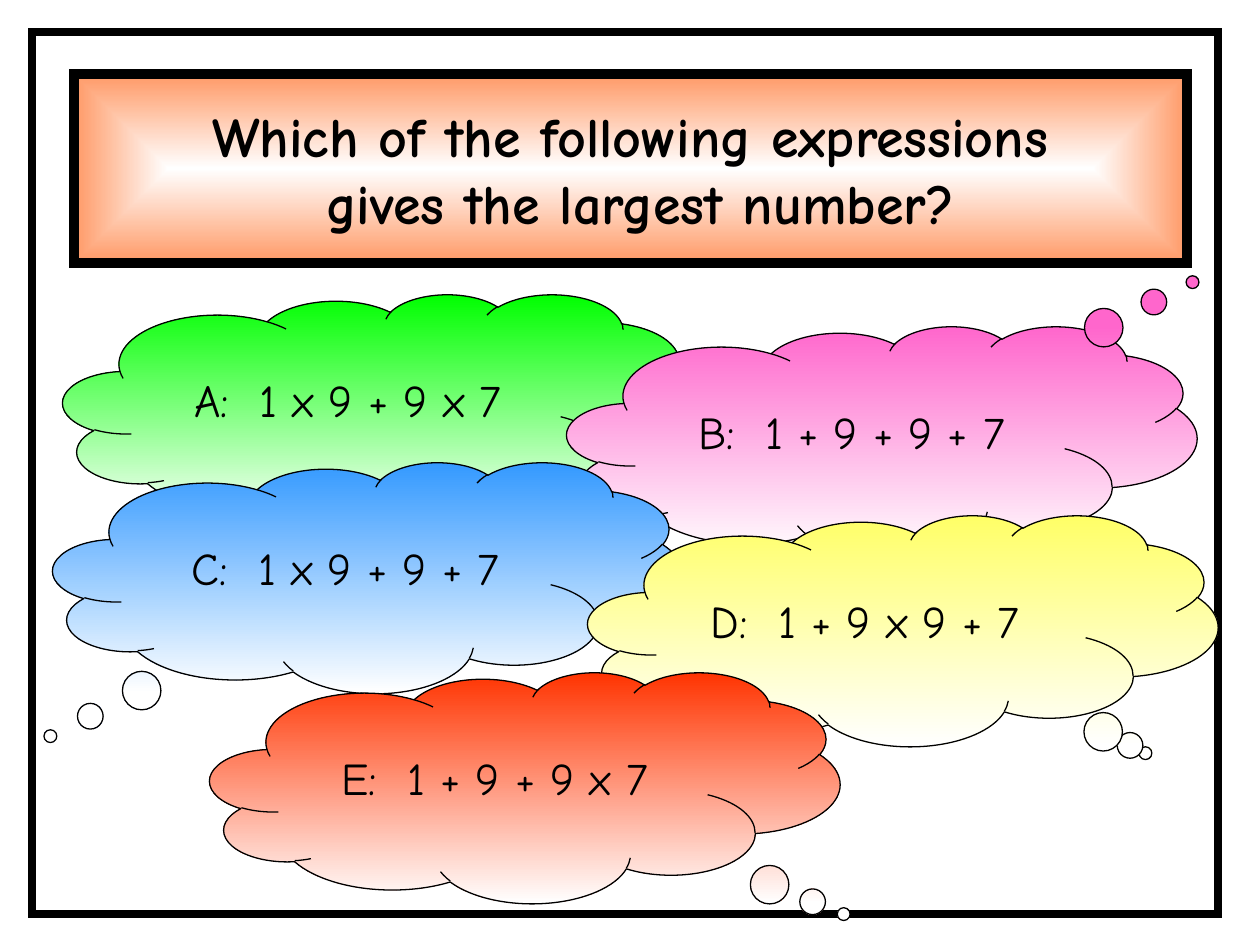
from dataclasses import dataclass

from lxml import etree
from pptx import Presentation
from pptx.dml.color import RGBColor
from pptx.enum.shapes import MSO_SHAPE
from pptx.enum.text import MSO_ANCHOR, MSO_AUTO_SIZE, PP_ALIGN
from pptx.oxml.ns import qn
from pptx.util import Emu, Pt

RECTANGLE, CLOUD = MSO_SHAPE.RECTANGLE, MSO_SHAPE.CLOUD_CALLOUT
CENTER = PP_ALIGN.CENTER
TOP, MIDDLE = MSO_ANCHOR.TOP, MSO_ANCHOR.MIDDLE
NO_AUTOFIT = MSO_AUTO_SIZE.NONE

PX_PER_INCH = 126
FONT = "Comic Neue"
BLACK, WHITE, ORANGE = "000000", "FFFFFF", "FF9966"
CLOUD_WIDTH, CLOUD_HEIGHT = 630, 231
QUESTION = ["Which of the following expressions", " gives the largest number?"]


@dataclass
class Answer:
    text: str
    left: int
    top: int
    color: str
    tail_x: float
    tail_y: float


ANSWERS = [
    Answer("A:  1 x 9 + 9 x 7 ", 63, 294, "00FF00", 0.248, 0.885),
    Answer("B:  1 + 9 + 9 + 7 ", 567, 326, "FF66CC", 0.493, -0.69),
    Answer("C:  1 x 9 + 9 + 7", 53, 462, "3399FF", -0.504, 0.687),
    Answer("D:  1 + 9 x 9 + 7  ", 588, 515, "FFFF66", 0.385, 0.531),
    Answer("E:  1 + 9 + 9 x 7 ", 210, 672, "FF3300", 0.506, 0.548),
]


def px(length: int) -> Emu:
    return Emu(round(length * 914400 / PX_PER_INCH))


def rgb(color: str) -> RGBColor:
    return RGBColor.from_string(color)


def set_format(target, values: dict) -> None:
    for name, value in values.items():
        setattr(target, name, value)


def set_line(shape, width: float) -> None:
    shape.line.color.rgb = rgb(BLACK)
    shape.line.width = Pt(width)


def set_square_corners(shape) -> None:
    outline = shape._element.spPr.find(qn("a:ln"))
    etree.SubElement(outline, qn("a:miter"), lim="800000")


def set_gradient(shape, start: str, end: str) -> None:
    """Fill from top to bottom."""
    shape.fill.gradient()
    shape.fill.gradient_angle = 270
    for stop, color in zip(shape.fill.gradient_stops, (start, end)):
        stop.color.rgb = rgb(color)


def spread_from_center(shape) -> None:
    """Turn a linear gradient into one that follows the shape's outline."""
    gradient = shape._element.spPr.find(qn("a:gradFill"))
    gradient.remove(gradient.find(qn("a:lin")))
    outward = etree.SubElement(gradient, qn("a:path"), path="shape")
    etree.SubElement(outward, qn("a:fillToRect"),
                     {side: "50000" for side in "ltrb"})


def write_lines(shape, lines: list[str], size: int, bold: bool, frame_format: dict) -> None:
    frame = shape.text_frame
    set_format(frame, frame_format)
    frame.text = "\n".join(lines)
    for paragraph in frame.paragraphs:
        paragraph.alignment = CENTER
        font = paragraph.runs[0].font
        set_format(font, {"name": FONT, "size": Pt(size), "bold": bold})
        font.color.rgb = rgb(BLACK)


def add_frame(slide) -> None:
    frame = slide.shapes.add_shape(RECTANGLE, px(32), px(32), px(1186), px(882))
    frame.shadow.inherit = False
    frame.fill.background()
    set_line(frame, 4.5)
    set_square_corners(frame)


def add_question(slide) -> None:
    title = slide.shapes.title
    set_format(title, {"left": px(74), "top": px(74),
                       "width": px(1113), "height": px(189)})
    set_gradient(title, WHITE, ORANGE)
    spread_from_center(title)
    set_line(title, 6)
    set_square_corners(title)
    write_lines(title, QUESTION, 32, True,
                {"word_wrap": False, "auto_size": NO_AUTOFIT,
                 "vertical_anchor": MIDDLE})


def add_answer(slide, answer: Answer) -> None:
    cloud = slide.shapes.add_shape(CLOUD, px(answer.left), px(answer.top),
                                   px(CLOUD_WIDTH), px(CLOUD_HEIGHT))
    cloud.shadow.inherit = False
    cloud.adjustments[0] = answer.tail_x
    cloud.adjustments[1] = answer.tail_y
    set_gradient(cloud, answer.color, WHITE)
    set_line(cloud, 0.75)
    write_lines(cloud, [answer.text], 26, False,
                {"word_wrap": True, "vertical_anchor": TOP,
                 "margin_top": px(43)})


def main() -> None:
    deck = Presentation()
    set_format(deck, {"slide_width": px(1260), "slide_height": px(945)})
    slide = deck.slides.add_slide(deck.slide_layouts[5])
    add_frame(slide)
    add_question(slide)
    for answer in ANSWERS:
        add_answer(slide, answer)
    deck.save("out.pptx")


if __name__ == "__main__":
    main()
